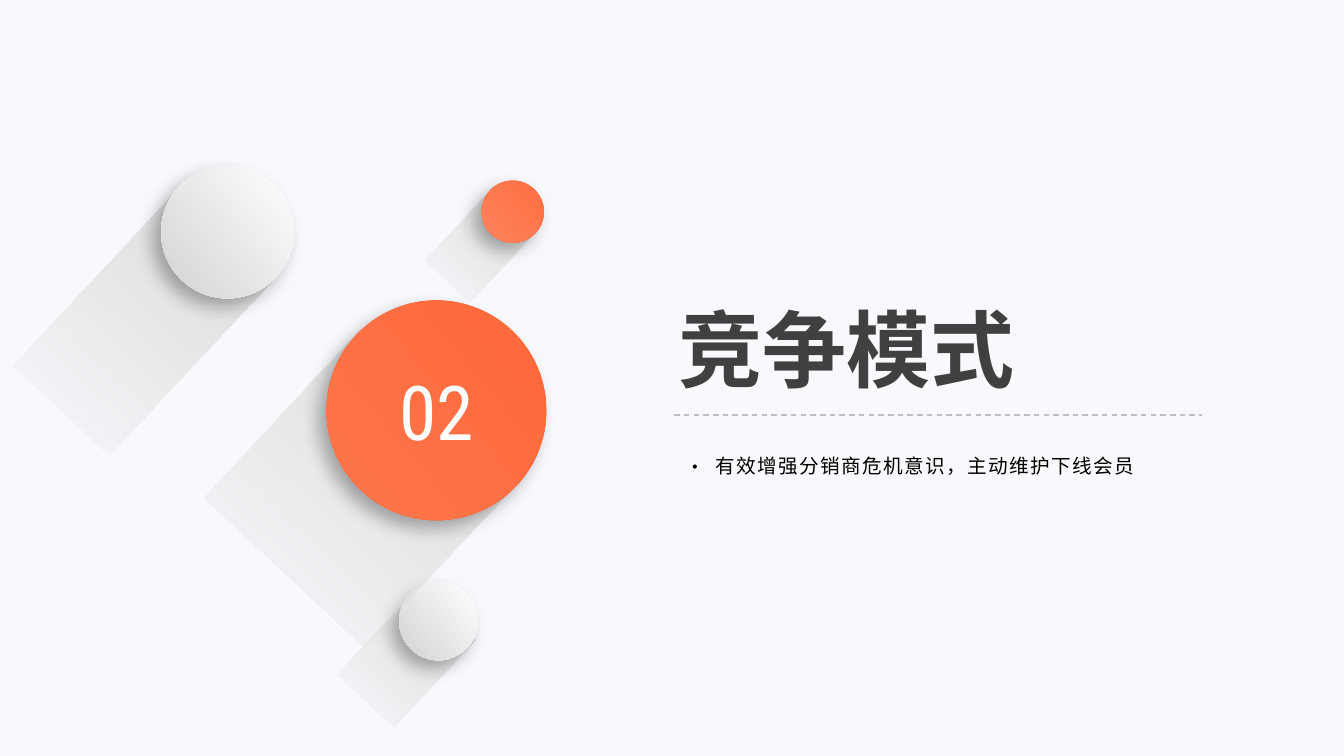
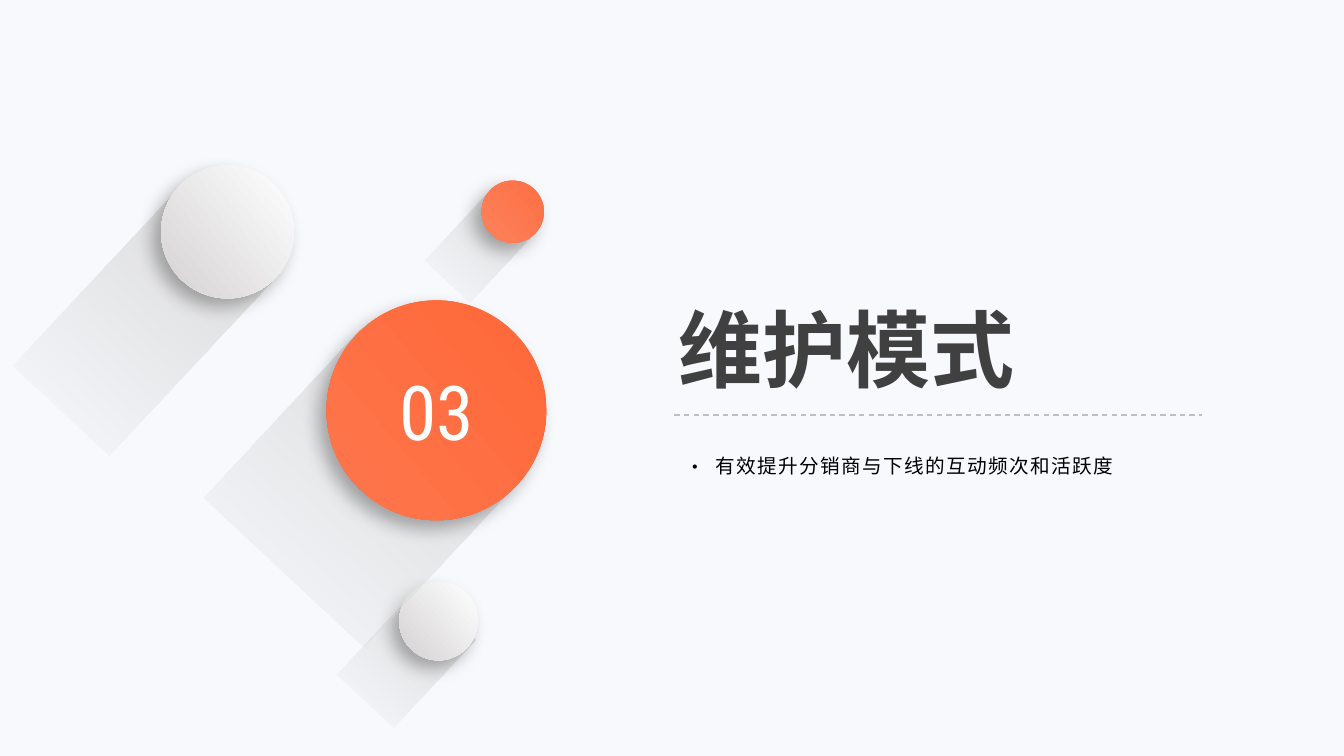
"""Build two section-divider slides with circles casting long shadows."""
from lxml.etree import SubElement
from pptx import Presentation
from pptx.dml.color import RGBColor
from pptx.enum.dml import MSO_LINE
from pptx.enum.shapes import MSO_CONNECTOR, MSO_SHAPE
from pptx.enum.text import MSO_ANCHOR, MSO_AUTO_SIZE, PP_ALIGN
from pptx.oxml.ns import qn
from pptx.util import Cm, Pt

SECTIONS = [
    ("02", "竞争模式", "有效增强分销商危机意识，主动维护下线会员"),
    ("03", "维护模式", "有效提升分销商与下线的互动频次和活跃度"),
]
COLORS = {
    "background": "F8F9FD", "number": "FFFFFF", "body": "000000", "rule": "BFBFBF",
    "trail": "D9D9D9", "shadow": "000000",
}
GRADIENTS = {
    "title": ("404040", "0D0D0D"),
    "trail": (COLORS["trail"], COLORS["trail"]),
    "coral": ("FE6F43", "FC825C"),
    "orange": ("FE6839", "FE764C"),
    "silver": ("FFFFFF", "D4D2D3"),
}
BALLS = [
    {"trail": (11.35, 4.93, 1.55, 2.49), "ball": (12.14, 4.55, 1.57), "fill": "coral"},
    {"trail": (9.25, 15.04, 1.96, 3.02), "ball": (10.06, 14.66, 1.98), "fill": "silver"},
    {"trail": (6.35, 9.42, 5.54, 5.79), "ball": (8.23, 7.57, 5.54), "fill": "orange",
     "numbered": True},
    {"trail": (1.98, 5, 3.33, 6.17), "ball": (4.06, 4.17, 3.35), "fill": "silver"},
]
TITLE_BOX = (16.84, 7.37, 9.02, 2.82)
RULE = (16.99, 10.46, 30.28, 10.46)
BODY_BOX = (17.02, 11.02, 14.12, 1.14)
CJK_FONT, NUMBER_FONT = "Noto Sans CJK SC", "Roboto Condensed"
TRAIL_TILT = 43
BULLET_INDENT = Cm(0.76)


def rgb(name):
    return RGBColor.from_string(COLORS[name])


def cms(values):
    return [Cm(v) for v in values]


def set_gradient(fill, name, angle):
    fill.gradient()
    fill.gradient_angle = 360 - angle
    for stop, color in zip(fill.gradient_stops, GRADIENTS[name]):
        stop.color.rgb = RGBColor.from_string(color)


def add_run(p, text, font, size):
    r = p.add_run()
    r.text = text
    r.font.name, r.font.size = font, Pt(size)
    SubElement(r.font._element, qn("a:ea"), typeface=font)
    return r


def add_gradient_shape(group, kind, box, gradient, angle):
    sp = group.shapes.add_shape(kind, *cms(box))
    set_gradient(sp.fill, gradient, angle)
    sp.line.fill.background()
    sp.shadow.inherit = False
    return sp


def add_trail(group, box):
    sp = add_gradient_shape(group, MSO_SHAPE.RECTANGLE, box, "trail", 90)
    sp.rotation = TRAIL_TILT
    end_color = sp.element.spPr.findall(".//" + qn("a:srgbClr"))[-1]
    SubElement(end_color, qn("a:alpha"), val="0")


def add_ball(group, left, top, size, gradient):
    sp = add_gradient_shape(group, MSO_SHAPE.OVAL, (left, top, size, size), gradient, 140)
    effects = sp.element.spPr.find(qn("a:effectLst"))
    shadow = SubElement(effects, qn("a:outerShdw"), blurRad=str(Pt(13)), dist=str(Pt(8)),
                        dir=str(135 * 60000), algn="tr", rotWithShape="0")
    color = SubElement(shadow, qn("a:srgbClr"), val=COLORS["shadow"])
    SubElement(color, qn("a:alpha"), val="30000")
    return sp


def add_number(sp, number):
    tf = sp.text_frame
    tf.vertical_anchor = MSO_ANCHOR.MIDDLE
    p = tf.paragraphs[0]
    p.alignment = PP_ALIGN.CENTER
    add_run(p, number, NUMBER_FONT, 54).font.color.rgb = rgb("number")


def add_balls(slide, number):
    for item in BALLS:
        group = slide.shapes.add_group_shape()
        add_trail(group, item["trail"])
        ball = add_ball(group, *item["ball"], item["fill"])
        if item.get("numbered"):
            add_number(ball, number)


def format_title(title, text):
    title.left, title.top, title.width, title.height = cms(TITLE_BOX)
    tf = title.text_frame
    tf.word_wrap = False
    tf.auto_size = MSO_AUTO_SIZE.SHAPE_TO_FIT_TEXT
    tf.vertical_anchor = MSO_ANCHOR.TOP
    p = tf.paragraphs[0]
    p.alignment = PP_ALIGN.LEFT
    r = add_run(p, text, CJK_FONT, 60)
    r.font.bold = True
    set_gradient(r.font.fill, "title", 90)


def add_rule(slide):
    line = slide.shapes.add_connector(MSO_CONNECTOR.STRAIGHT, *cms(RULE))
    line.line.color.rgb = rgb("rule")
    line.line.width = Pt(1)
    line.line.dash_style = MSO_LINE.DASH
    SubElement(line.element.spPr, qn("a:effectLst"))


def add_body(slide, text):
    tf = slide.shapes.add_textbox(*cms(BODY_BOX)).text_frame
    tf.word_wrap = True
    tf.auto_size = MSO_AUTO_SIZE.SHAPE_TO_FIT_TEXT
    p = tf.paragraphs[0]
    p.line_spacing = 1.5
    pPr = p._p.get_or_add_pPr()
    pPr.set("marL", str(BULLET_INDENT))
    pPr.set("indent", str(-BULLET_INDENT))
    SubElement(pPr, qn("a:buFont"), typeface=CJK_FONT)
    SubElement(pPr, qn("a:buChar"), char="·")
    r = add_run(p, text, CJK_FONT, 14)
    r.font.color.rgb = rgb("body")
    r.font._element.set("spc", "100")


def main():
    prs = Presentation()
    prs.slide_width, prs.slide_height = Cm(33.87), Cm(19.05)
    background = prs.slide_master.background.fill
    background.solid()
    background.fore_color.rgb = rgb("background")
    title_only = prs.slide_layouts[5]
    for number, title, body in SECTIONS:
        slide = prs.slides.add_slide(title_only)
        add_balls(slide, number)
        format_title(slide.shapes.title, title)
        add_rule(slide)
        add_body(slide, body)
    prs.save("out.pptx")


if __name__ == "__main__":
    main()
